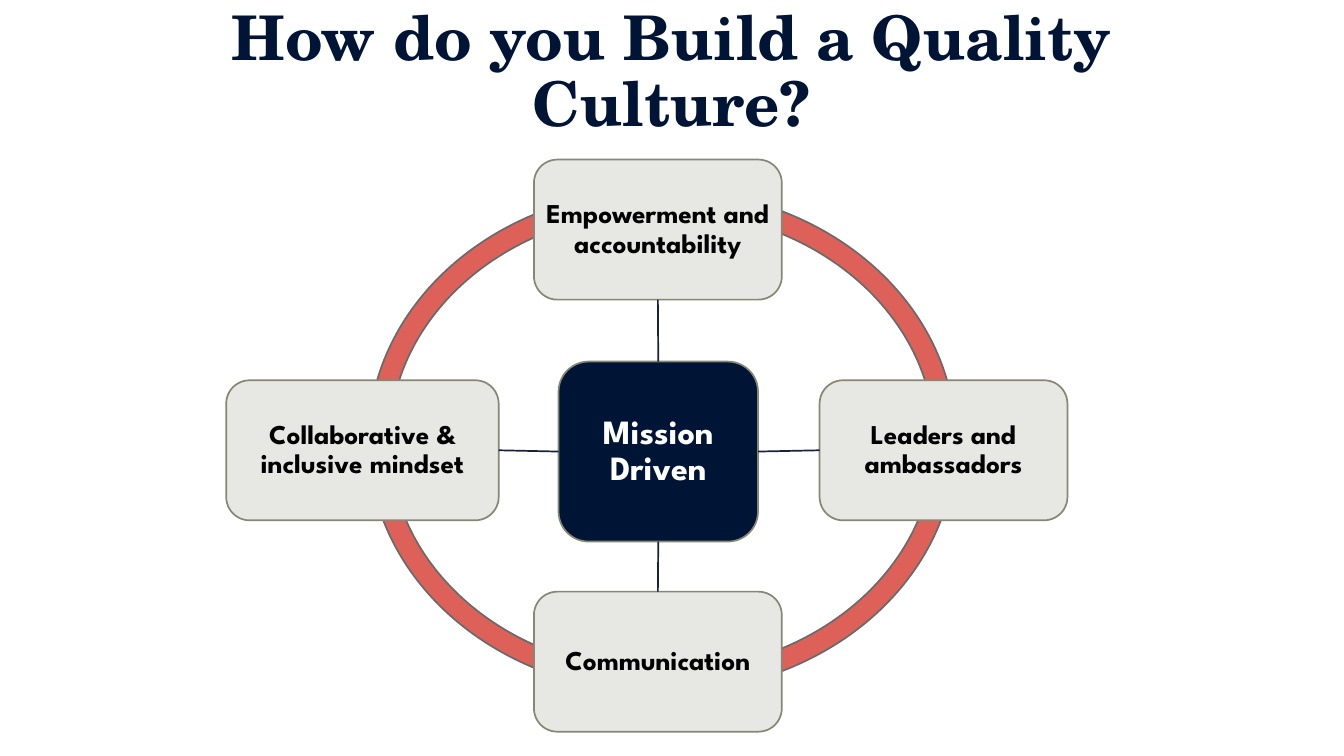
from lxml import etree
from pptx import Presentation
from pptx.dml.color import RGBColor
from pptx.enum import shapes, text
from pptx.oxml import ns
from pptx.util import Pt

NAVY = "001436"
SANS = "League Spartan"
TOP, LEFT, BOTTOM, RIGHT = range(4)

HUB = ("Mission Driven", (658, 426, 235, 212))
PILLARS = [
    ("Empowerment and accountability", (629, 188, 292, 165), TOP, BOTTOM),
    ("Leaders and ambassadors", (965.5, 448, 292, 165), RIGHT, LEFT),
    ("Communication", (629, 697, 292, 165), BOTTOM, TOP),
    ("Collaborative & inclusive mindset", (266.5, 448, 321, 165), LEFT, RIGHT),
]


def color(value):
    return RGBColor.from_string(value)


def apply(target, values):
    for name, value in values.items():
        setattr(target, name, value)


def write(shape, words, inset, size, font, ink):
    frame = shape.text_frame
    apply(frame, {
        "word_wrap": True,
        "vertical_anchor": text.MSO_ANCHOR.MIDDLE,
        "margin_left": Pt(inset), "margin_right": Pt(inset),
        "margin_top": Pt(inset), "margin_bottom": Pt(inset),
    })
    para = frame.paragraphs[0]
    apply(para, {"alignment": text.PP_ALIGN.CENTER, "line_spacing": 0.9})
    span = para.add_run()
    span.text = words
    apply(span.font, {"size": Pt(size), "name": font, "bold": True})
    span.font.color.rgb = color(ink)


def add_figure(page, kind, area, fill, line):
    figure = page.shapes.add_shape(kind, *map(Pt, area))
    figure.shadow.inherit = False
    figure.fill.solid()
    figure.fill.fore_color.rgb = color(fill)
    figure.line.color.rgb = color(line)
    figure.line.width = Pt(2)
    return figure


def add_card(page, words, area, fill, ink, size, inset):
    kind = shapes.MSO_SHAPE.ROUNDED_RECTANGLE
    card = add_figure(page, kind, area, fill, "878775")
    write(card, words, inset, size, SANS, ink)
    return card


def add_link(page, start, start_side, end, end_side):
    link = page.shapes.add_connector(shapes.MSO_CONNECTOR.STRAIGHT, 0, 0, 0, 0)
    link.begin_connect(start, start_side)
    link.end_connect(end, end_side)
    link.line.color.rgb = color("192040")
    link.line.width = Pt(2)
    etree.SubElement(link._element.spPr, ns.qn("a:effectLst"))


def add_title(page, words, area):
    box = page.shapes.add_textbox(*map(Pt, area))
    write(box, words, 0, 72.6, "TeX Gyre Schola", NAVY)


def main():
    deck = Presentation()
    apply(deck, {"slide_width": Pt(1583.28), "slide_height": Pt(890.64)})
    page = deck.slides.add_slide(deck.slide_layouts[6])

    ring = add_figure(page, shapes.MSO_SHAPE.DONUT, (434, 223, 692, 593.5),
                      "DE6159", "6A6A6A")
    ring.adjustments[0] = 0.042

    hub = add_card(page, *HUB, NAVY, "FFFFFF", 40, 8)
    for words, area, hub_side, card_side in PILLARS:
        card = add_card(page, words, area, "E7E7E3", "000000", 32, 6.5)
        add_link(page, hub, hub_side, card, card_side)

    add_title(page, "How do you Build a Quality Culture?", (101, 15, 1380, 143.5))
    deck.save("out.pptx")


if __name__ == "__main__":
    main()
